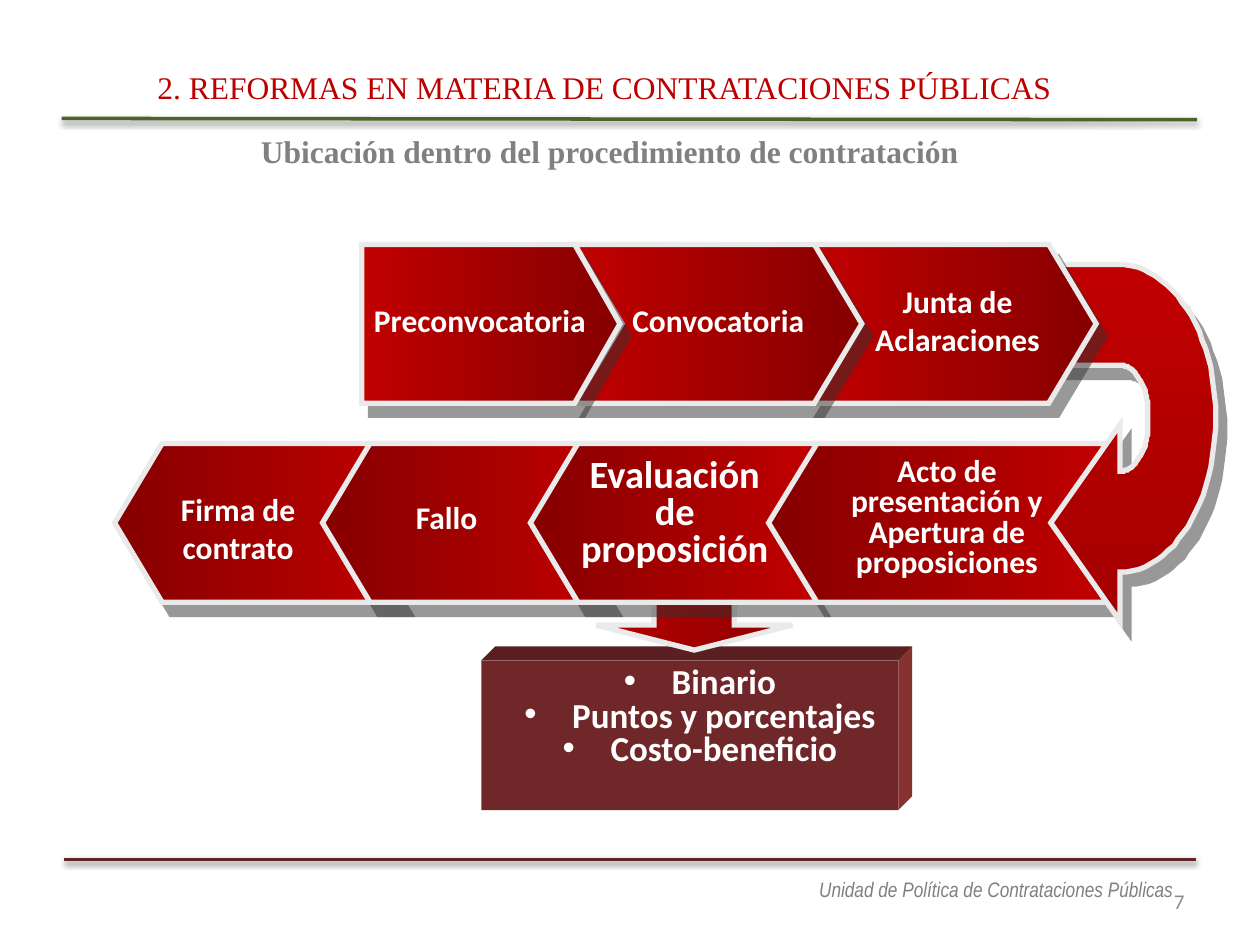
from lxml import etree
from pptx import Presentation
from pptx.dml.color import RGBColor
from pptx.enum.shapes import MSO_CONNECTOR, MSO_SHAPE
from pptx.enum.text import MSO_ANCHOR, PP_ALIGN
from pptx.oxml.ns import qn
from pptx.util import Pt

PX = 9144
CHEVRON, PENTAGON = MSO_SHAPE.CHEVRON, MSO_SHAPE.PENTAGON
CALLOUT, RECTANGLE = MSO_SHAPE.DOWN_ARROW_CALLOUT, MSO_SHAPE.RECTANGLE
STRAIGHT = MSO_CONNECTOR.STRAIGHT
TOP, MIDDLE = MSO_ANCHOR.TOP, MSO_ANCHOR.MIDDLE
LEFT, CENTER, RIGHT = PP_ALIGN.LEFT, PP_ALIGN.CENTER, PP_ALIGN.RIGHT
COLORS = {
    "heading": "BC0000", "gray": "808080", "number": "8C8C8C", "white": "FFFFFF",
    "green": "4F6228", "maroon": "632523", "outline": "EAEAEA",
    "red": "C00000", "dark": "860000", "arrow_end": "A40000",
    "front": "70272A", "top": "5A1F20", "side": "853230",
    "shadow": "333333", "black": "000000",
}


def rgb(name):
    """Return the named colour."""
    return RGBColor.from_string(COLORS[name])


def emu(*lengths):
    """Turn px lengths into EMU."""
    return [round(length * PX) for length in lengths]


def add_shadow(shape, color, alpha, blur, distance, angle):
    """Give a shape an outer shadow, with blur and distance in points."""
    effects = etree.SubElement(shape._element.spPr, qn("a:effectLst"))
    shadow = etree.SubElement(effects, qn("a:outerShdw"), {
        "blurRad": str(Pt(blur)), "dist": str(Pt(distance)),
        "dir": str(angle * 60000), "algn": "ctr", "rotWithShape": "0"})
    tint = etree.SubElement(shadow, qn("a:srgbClr"), val=COLORS[color])
    etree.SubElement(tint, qn("a:alpha"), val=str(alpha * 1000))


def style_step(shape, end="dark", angle=0, shadowed=True):
    """Apply the red gradient, pale outline and hard shadow of the process."""
    shape.fill.gradient()
    shape.fill.gradient_angle = angle
    for stop, name in zip(shape.fill.gradient_stops, ("red", end)):
        stop.color.rgb = rgb(name)
    shape.line.color.rgb = rgb("outline")
    shape.line.width = Pt(3)
    etree.SubElement(shape.line._get_or_add_ln(), qn("a:miter"), lim="800000")
    if shadowed:
        add_shadow(shape, "shadow", 50, 0, 8.6, 54)
    else:
        shape.shadow.inherit = False


def write(frame, lines, size, color="white", font="Calibri", bold=True, italic=False,
          align=CENTER, spacing=None, anchor=TOP, bullet=False):
    """Fill a text frame with one paragraph for each line."""
    frame.word_wrap = True
    frame.vertical_anchor = anchor
    for index, line in enumerate(lines):
        paragraph = frame.paragraphs[0] if index == 0 else frame.add_paragraph()
        paragraph.alignment = align
        if spacing:
            paragraph.line_spacing = spacing
        if bullet:
            properties = paragraph._p.get_or_add_pPr()
            indent = emu(38)[0]
            properties.set("marL", str(indent))
            properties.set("indent", str(-indent))
            etree.SubElement(properties, qn("a:buFont"), typeface="Arial")
            etree.SubElement(properties, qn("a:buChar"), char="•")
        run = paragraph.add_run()
        run.text = line
        run.font.name, run.font.size = font, Pt(size)
        run.font.bold, run.font.italic = bold, italic
        run.font.color.rgb = rgb(color)


def add_label(slide, box, lines, size=18, **options):
    """Add a text box."""
    write(slide.shapes.add_textbox(*emu(*box)).text_frame, lines, size, **options)


def add_step(slide, kind, box, point, flipped=False):
    """Add one arrow-shaped step of the process."""
    shape = slide.shapes.add_shape(kind, *emu(*box))
    shape.adjustments[0] = point
    if flipped:
        shape._element.spPr.find(qn("a:xfrm")).set("flipH", "1")
    style_step(shape)


def add_rule(slide, start, end, color):
    """Add a shadowed horizontal rule."""
    line = slide.shapes.add_connector(STRAIGHT, *emu(*start, *end))
    line.line.color.rgb = rgb(color)
    line.line.width = Pt(2)
    add_shadow(line, "black", 38, 3.1, 1.6, 90)


def curve(start, first, second, end, steps=24):
    """Return points along a cubic curve, without its start."""
    points = []
    for step in range(1, steps + 1):
        t = step / steps
        weights = ((1 - t) ** 3, 3 * t * (1 - t) ** 2, 3 * t * t * (1 - t), t ** 3)
        points.append(tuple(
            sum(weight * value for weight, value in zip(weights, values))
            for values in zip(start, first, second, end)))
    return points


def add_polygon(slide, points):
    """Add a closed outline through the points."""
    builder = slide.shapes.build_freeform(*points[0], scale=PX)
    builder.add_line_segments(points[1:], close=True)
    return builder.convert_to_shape()


def add_turn(slide, left, top):
    """Add the curved arrow that leads from the upper row to the lower one."""
    points = [(66, 205), (121, 283), (121, 244)]
    points += curve((121, 244), (163, 244), (197, 189), (197, 121))
    points += curve((197, 121), (197, 54), (162, 0), (119, 0))
    points += [(0, 0), (0, 80), (121, 80)]
    points += curve((121, 80), (133, 80), (143, 96), (143, 117))
    points += [(143, 127)]
    points += curve((143, 127), (143, 148), (133, 164), (121, 164))
    points += [(121, 127)]
    shape = add_polygon(slide, [(left + x, top + y) for x, y in points])
    style_step(shape, "arrow_end", 270)


def add_upper_row(slide, left, top):
    """Add the steps before the turn."""
    for offset in (355, 169):
        add_step(slide, CHEVRON, (left + offset, top, 228, 126), 0.299)
    add_step(slide, PENTAGON, (left, top, 205, 126), 0.285)
    add_label(slide, (left, top + 40, 213, 40), ["Preconvocatoria"], align=LEFT)
    add_label(slide, (left + 205, top + 40, 173, 40), ["Convocatoria"], align=LEFT)
    add_label(slide, (left + 394, top + 25, 158, 70), ["Junta de", "Aclaraciones"])


def add_lower_row(slide, left, top):
    """Add the steps after the turn, which run to the left."""
    for index in range(3):
        add_step(slide, CHEVRON, (left + 165 * index, top, 228, 126), 0.299, True)
    add_step(slide, CHEVRON, (left + 519, top, 268, 126), 0.305, True)
    add_label(slide, (left + 23, top + 32, 150, 70), ["Firma de contrato"])
    add_label(slide, (left + 220, top + 38, 87, 40), ["Fallo"])
    add_label(slide, (left + 354, top + 7, 181, 98), ["Evaluación de proposición"],
              22, spacing=0.8)
    add_label(slide, (left + 558, top + 7, 205, 106),
              ["Acto de presentación y", "Apertura de proposiciones"], spacing=0.8)


def add_criteria(slide, left, top, width, height, depth=11):
    """Add the block of evaluation criteria and the arrow behind the lower row."""
    right, bottom = left + width, top + height
    back = top - depth
    front = slide.shapes.add_shape(RECTANGLE, *emu(left, top, width, height))
    upper = add_polygon(slide, [(left, top), (left + depth, back),
                                (right + depth, back), (right, top)])
    side = add_polygon(slide, [(right, top), (right + depth, back),
                               (right + depth, bottom - depth), (right, bottom)])
    for face, color in ((front, "front"), (upper, "top"), (side, "side")):
        face.fill.solid()
        face.fill.fore_color.rgb = rgb(color)
        face.line.fill.background()
        face.shadow.inherit = False
    arrow = slide.shapes.add_shape(CALLOUT, *emu(left + 47, top - 101, 244, 93))
    for index, value in enumerate((0.685, 0.838, 0.213, 0.381)):
        arrow.adjustments[index] = value
    style_step(arrow, shadowed=False)
    add_label(slide, (left + 16, top + 1, 315, 91),
              ["Binario", "Puntos y porcentajes", "Costo-beneficio"], 20,
              spacing=0.8, bullet=True)


def add_header(slide):
    """Add the section heading, its rule and the slide title."""
    add_rule(slide, (49, 94), (950, 95), "green")
    add_label(slide, (93, 49, 780, 40),
              ["2. REFORMAS EN MATERIA DE CONTRATACIONES PÚBLICAS "],
              color="heading", font="Times New Roman", bold=False)
    title = slide.shapes.title
    title.left, title.top, title.width, title.height = emu(34, 105, 900, 30)
    write(title.text_frame, ["Ubicación dentro del procedimiento de contratación"], 18,
          color="gray", font="Times New Roman", anchor=MIDDLE)


def add_footer(slide):
    """Add the lower rule, the unit name and the slide number."""
    add_rule(slide, (51, 682), (949, 682), "maroon")
    add_label(slide, (67, 691, 874, 30), ["Unidad de Política de Contrataciones Públicas"],
              12, color="gray", font="Arial Narrow", bold=False, italic=True, align=RIGHT)
    add_label(slide, (717, 695, 233, 40), ["7"], 12, color="number", bold=False,
              align=RIGHT, anchor=MIDDLE)


def main():
    """Build and save the slide."""
    presentation = Presentation()
    presentation.slide_width, presentation.slide_height = emu(1000, 750)
    slide = presentation.slides.add_slide(presentation.slide_layouts[5])
    add_header(slide)
    add_footer(slide)
    add_criteria(slide, 382, 524, 331, 119)
    add_lower_row(slide, 91, 352)
    add_turn(slide, 768, 210)
    add_upper_row(slide, 287, 194)
    presentation.save("out.pptx")


if __name__ == "__main__":
    main()
